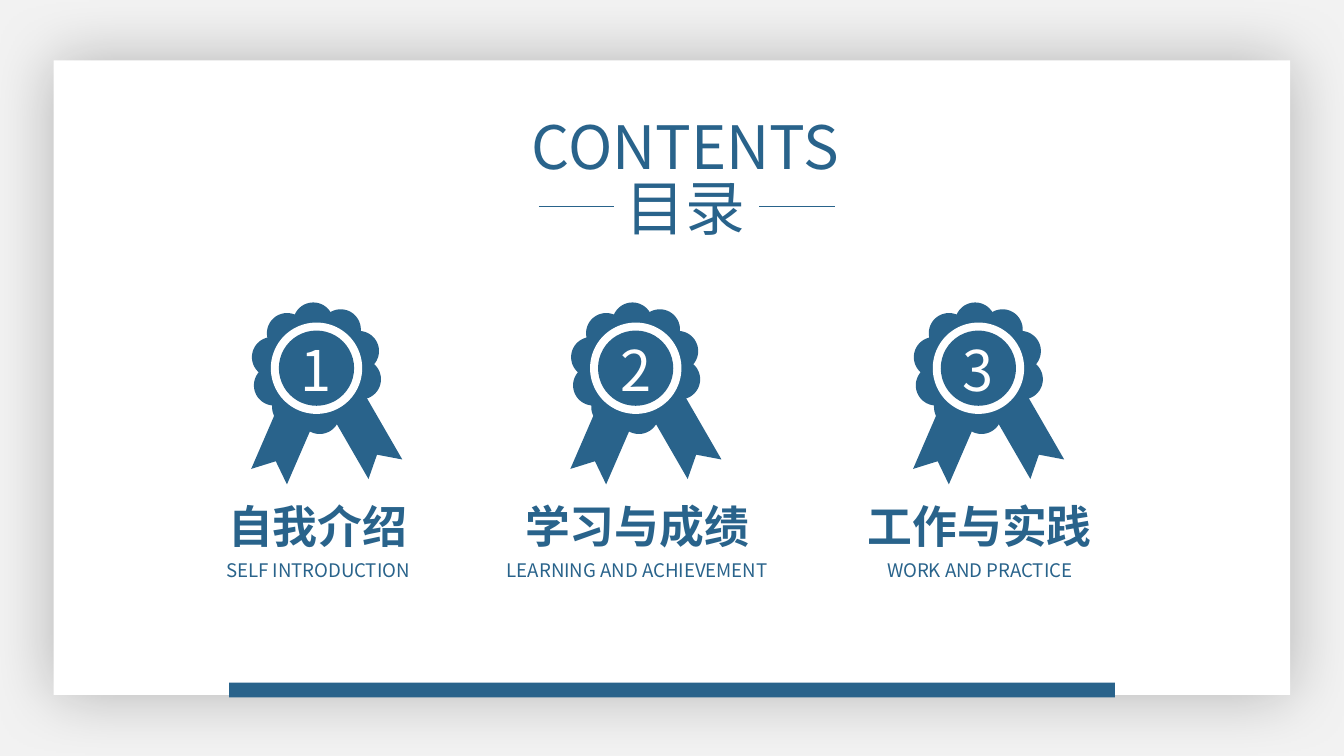
import math

import lxml.etree
import pptx
import pptx.dml.color
import pptx.enum.shapes
import pptx.enum.text
import pptx.oxml.ns
import pptx.util

COLORS = {"blue": "29638B", "white": "FFFFFF", "backdrop": "F2F2F2", "shadow": "000000"}
FONT = "Noto Sans CJK SC"
COLUMNS, ROWS = 100, 56.25
CELL = pptx.util.Inches(0.1)
MEDAL_ROW = 27.4
SECTIONS = [
    (23.55, "自我介绍", "SELF INTRODUCTION", 18.2),
    (47.3, "学习与成绩", "LEARNING AND ACHIEVEMENT", 27.4),
    (72.8, "工作与实践", "WORK AND PRACTICE", 18.2),
]
RIBBONS = [(-2.4, 5.45, 113.4), (3.7, 5.05, 60)]
LOBES = 10


def cells(count):
    return round(count * CELL)


def rgb(name):
    return pptx.dml.color.RGBColor.from_string(COLORS[name])


def paint(shape, color):
    shape.shadow.inherit = False
    shape.fill.solid()
    shape.fill.fore_color.rgb = rgb(color)
    shape.line.fill.background()


def add_block(shapes, kind, column, row, width, height, color):
    preset = getattr(pptx.enum.shapes.MSO_SHAPE, kind)
    shape = shapes.add_shape(preset, cells(column), cells(row), cells(width), cells(height))
    paint(shape, color)
    return shape


def add_outline(shapes, points, color):
    corners = [(cells(column), cells(row)) for column, row in points]
    builder = shapes.build_freeform(*corners[0])
    builder.add_line_segments(corners[1:], close=True)
    shape = builder.convert_to_shape()
    paint(shape, color)
    return shape


def write(shape, text, size, color, bold=False, wrap=True):
    frame = shape.text_frame
    frame.text = text
    frame.word_wrap = wrap
    frame.vertical_anchor = pptx.enum.text.MSO_ANCHOR.MIDDLE
    frame.auto_size = pptx.enum.text.MSO_AUTO_SIZE.NONE
    paragraph = frame.paragraphs[0]
    paragraph.alignment = pptx.enum.text.PP_ALIGN.CENTER
    run = paragraph.runs[0]
    run.font.size = pptx.util.Pt(size)
    run.font.bold = bold
    run.font.name = FONT
    run.font.color.rgb = rgb(color)
    properties = run._r.get_or_add_rPr()
    east_asian = lxml.etree.SubElement(properties, pptx.oxml.ns.qn("a:ea"))
    east_asian.set("typeface", FONT)


def add_label(shapes, text, center, row, width, height, size, color="blue", **style):
    box = shapes.add_textbox(cells(center - width / 2), cells(row), cells(width), cells(height))
    write(box, text, size, color, **style)


def add_rule(slide, start, end, row):
    line = slide.shapes.add_connector(
        pptx.enum.shapes.MSO_CONNECTOR.STRAIGHT, cells(start), cells(row), cells(end), cells(row)
    )
    line.line.color.rgb = rgb("blue")
    line.line.width = pptx.util.Pt(0.5)
    lxml.etree.SubElement(line._element.spPr, pptx.oxml.ns.qn("a:effectLst"))


def add_panel(slide):
    panel = add_block(slide.shapes, "RECTANGLE", 4, 4.5, 92, 47.2, "white")
    effects = panel._element.spPr.find(pptx.oxml.ns.qn("a:effectLst"))
    shadow = lxml.etree.SubElement(effects, pptx.oxml.ns.qn("a:outerShdw"))
    shadow.set("blurRad", str(pptx.util.Pt(35)))
    shadow.set("dist", "0")
    shadow.set("algn", "ctr")
    shadow.set("rotWithShape", "0")
    color = lxml.etree.SubElement(shadow, pptx.oxml.ns.qn("a:srgbClr"))
    color.set("val", COLORS["shadow"])
    lxml.etree.SubElement(color, pptx.oxml.ns.qn("a:alpha")).set("val", "25000")
    slide.shapes._spTree.insert(2, panel._element)


def add_title(slide):
    title = slide.shapes.title
    title.left, title.top, title.width, title.height = map(cells, (35.5, 7.65, 31, 6.4))
    write(title, "CONTENTS", 32, "blue")
    add_label(slide.shapes, "目录", 51, 12.15, 11, 6.4, 32, wrap=False)
    for start in (40.1, 56.5):
        add_rule(slide, start, start + 5.6, 15.4)


def rosette_points(center, row):
    points = []
    for lobe in range(LOBES):
        direction = 2 * math.pi * lobe / LOBES - math.radians(22)
        for degrees in range(-62, 63, 4):
            angle = direction + math.radians(degrees)
            points.append((
                center + 3.4 * math.cos(direction) + 1.5 * math.cos(angle),
                row + 3.4 * math.sin(direction) + 1.5 * math.sin(angle),
            ))
    return points


def add_ribbon(shapes, center, row, rotation):
    left, right, top, bottom = center - 2.85, center + 2.85, row - 1.45, row + 1.45
    points = [(left, top), (right, top), (center + 1.6, row), (right, bottom), (left, bottom)]
    add_outline(shapes, points, "blue").rotation = rotation


def add_medal(slide, center, number):
    shapes = slide.shapes.add_group_shape().shapes
    for across, down, rotation in RIBBONS:
        add_ribbon(shapes, center + across, MEDAL_ROW + down, rotation)
    add_outline(shapes, rosette_points(center, MEDAL_ROW), "blue")
    for size, color in ((6.8, "white"), (5.6, "blue")):
        add_block(shapes, "OVAL", center - size / 2, MEDAL_ROW - size / 2, size, size, color)
    add_label(shapes, str(number), center, 24.45, 4.5, 6.1, 30, color="white", wrap=False)


def add_section(slide, number, center, heading, caption, caption_width):
    add_medal(slide, center, number)
    heading_width = 4.5 * len(heading)
    add_label(slide.shapes, heading, center + 0.1, 36.6, heading_width, 5, 24, bold=True)
    add_label(slide.shapes, caption, center + 0.1, 41.1, caption_width, 2.7, 10)


def main():
    presentation = pptx.Presentation()
    presentation.slide_width = cells(COLUMNS)
    presentation.slide_height = cells(ROWS)
    slide = presentation.slides.add_slide(presentation.slide_layouts[5])
    slide.background.fill.solid()
    slide.background.fill.fore_color.rgb = rgb("backdrop")
    add_panel(slide)
    add_title(slide)
    for number, section in enumerate(SECTIONS, 1):
        add_section(slide, number, *section)
    add_block(slide.shapes, "RECTANGLE", 17.05, 50.8, 65.9, 1.1, "blue")
    presentation.save("out.pptx")


if __name__ == "__main__":
    main()
